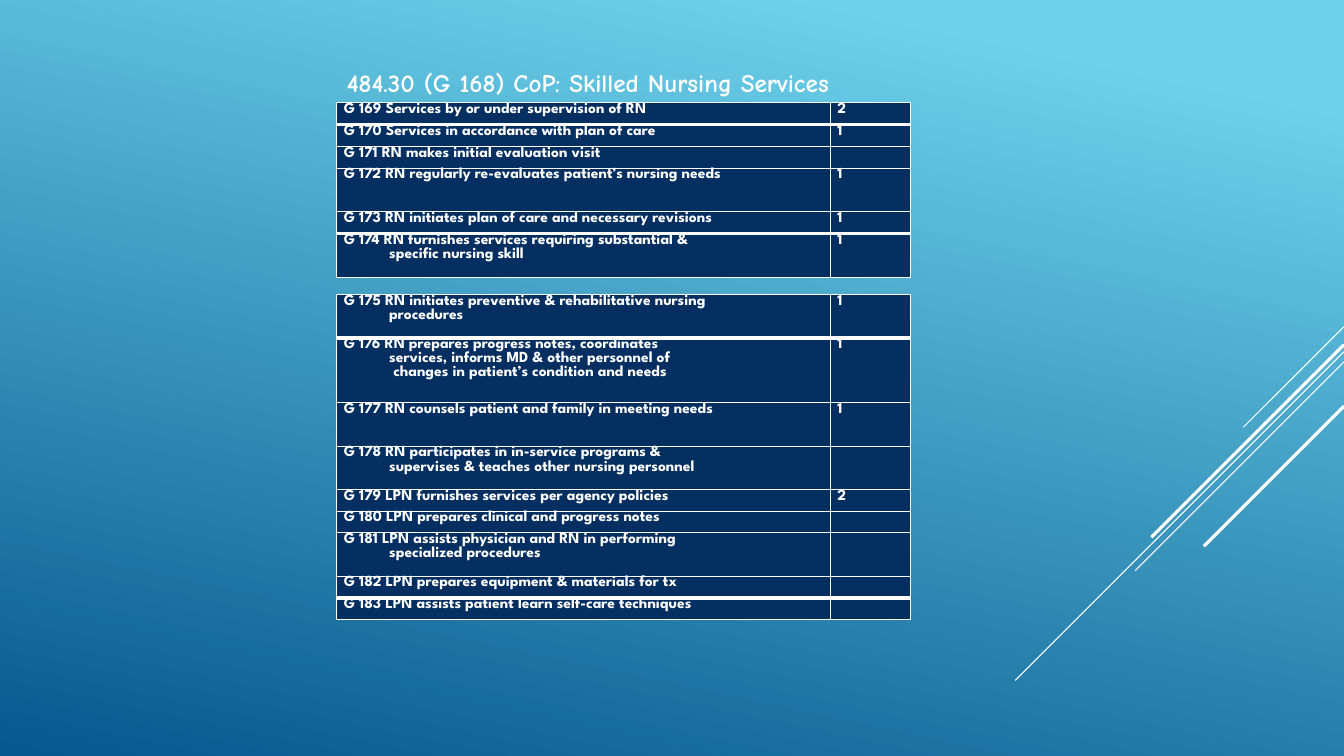
from lxml.etree import SubElement
from pptx import Presentation
from pptx.dml.color import RGBColor
from pptx.enum.shapes import MSO_CONNECTOR
from pptx.enum.text import MSO_ANCHOR, MSO_AUTO_SIZE, PP_ALIGN
from pptx.oxml import parse_xml
from pptx.oxml.ns import nsdecls, qn
from pptx.util import Inches, Pt

WHITE, NAVY = "FFFFFF", "052F61"
SKY, DEEP = "6ED2EB", "06588E"

RAYS = [(43.2, 7.5, 0.75), (46.53, 24.46, 0.75), (47.87, 15.53, 0.75),
        (45.6, 14.33, 2.25), (53.73, 10.43, 2.25)]

FIRST = [
    (1, "2", ["G 169 Services by or under supervision of RN"]),
    (1, "1", ["G 170 Services in accordance with plan of care"]),
    (1, "", ["G 171 RN makes initial evaluation visit"]),
    (2, "1", ["G 172 RN regularly re-evaluates patient’s nursing needs"]),
    (1, "1", ["G 173 RN initiates plan of care and necessary revisions"]),
    (2, "1", ["G 174 RN furnishes services requiring substantial &",
              "specific nursing skill"]),
]
SECOND = [
    (2, "1", ["G 175 RN initiates preventive & rehabilitative nursing",
              "procedures"]),
    (3, "1", ["G 176 RN prepares progress notes, coordinates",
              "services, informs MD & other personnel of",
              "changes in patient’s condition and needs"]),
    (2, "1", ["G 177 RN counsels patient and family in meeting needs"]),
    (2, "", ["G 178 RN participates in in-service programs &",
             "supervises & teaches other nursing personnel"]),
    (1, "2", ["G 179 LPN furnishes services per agency policies"]),
    (1, "", ["G 180 LPN prepares clinical and progress notes"]),
    (2, "", ["G 181 LPN assists physician and RN in performing",
             "specialized procedures"]),
    (1, "", ["G 182 LPN prepares equipment & materials for tx"]),
    (1, "", ["G 183 LPN assists patient learn self-care techniques"]),
]


def tint(code):
    return RGBColor.from_string(code)


class Deck:
    head, body = "Comic Neue", "League Spartan"

    def __init__(self):
        self.prs = Presentation()
        self.prs.slide_width = Inches(13.33)
        self.prs.slide_height = Inches(7.5)
        self.slide = self.prs.slides.add_slide(self.prs.slide_layouts[5])

    def col(self, share):
        return round(self.prs.slide_width * share / 100)

    def row(self, share):
        return round(self.prs.slide_height * share / 100)

    def back(self, start, end, angle):
        fill = self.slide.background.fill
        fill.gradient()
        fill.gradient_angle = angle
        for stop, place, code in zip(fill.gradient_stops, (0.1, 1), (start, end)):
            stop.position = place
            stop.color.rgb = tint(code)

    def run(self, para, text, font, size):
        run = para.add_run()
        run.text = text
        run.font.name = font
        run.font.size = Pt(size)
        run.font.bold = True
        run.font.color.rgb = tint(WHITE)

    def title(self, text, x, y, w, h):
        box = self.slide.shapes.title
        box.left, box.top = self.col(x), self.row(y)
        box.width, box.height = self.col(w), self.row(h)
        frame = box.text_frame
        frame.word_wrap = True
        frame.auto_size = MSO_AUTO_SIZE.SHAPE_TO_FIT_TEXT
        frame.vertical_anchor = MSO_ANCHOR.TOP
        para = frame.paragraphs[0]
        para.alignment = PP_ALIGN.LEFT
        self.run(para, text, self.head, 18)

    def ray(self, y, span, width):
        edge, top, step = self.col(100), self.row(y), self.col(span)
        line = self.slide.shapes.add_connector(
            MSO_CONNECTOR.STRAIGHT, edge, top, edge - step, top + step)
        line.line.color.rgb = tint(WHITE)
        line.line.width = Pt(width)
        SubElement(line._element.spPr, qn("a:effectLst"))

    def rule(self, cell, above, below):
        props = cell._tc.get_or_add_tcPr()
        sides = zip("LRTB", (1, 1, above, below))
        for spot, (side, width) in enumerate(sides):
            props.insert(spot, parse_xml(
                f'<a:ln{side} {nsdecls("a")} w="{Pt(width)}"><a:solidFill>'
                f'<a:srgbClr val="{WHITE}"/></a:solidFill></a:ln{side}>'))

    def fill(self, cell, lines):
        cell.fill.solid()
        cell.fill.fore_color.rgb = tint(NAVY)
        cell.margin_left = cell.margin_right = Inches(0.07)
        cell.margin_top = cell.margin_bottom = 0
        frame = cell.text_frame
        for spot, text in enumerate(lines):
            para = frame.add_paragraph() if spot else frame.paragraphs[0]
            if spot:
                props = para._p.get_or_add_pPr()
                props.set("marL", str(Inches(0.41 + 0.04 * spot)))
                props.set("indent", "0")
            if text:
                self.run(para, text, self.body, 11)
            else:
                SubElement(para._p, qn("a:endParaRPr"), sz="1100")

    def table(self, data, x, y, w, h):
        wide, high = self.col(w), self.row(h)
        table = self.slide.shapes.add_table(
            len(data), 2, self.col(x), self.row(y), wide, high).table
        table.first_row = table.horz_banding = False
        for col, share in zip(table.columns, (0.86, 0.14)):
            col.width = round(wide * share)
        units = sum(size for size, _, _ in data)
        last = len(data) - 1
        for spot, (size, count, lines) in enumerate(data):
            table.rows[spot].height = round(high * size / units)
            above = 3 if spot in (1, last) else 1
            below = 3 if spot in (0, last - 1) else 1
            for cell, text in zip(table.rows[spot].cells, (lines, [count])):
                self.fill(cell, text)
                self.rule(cell, above, below)


def main():
    deck = Deck()
    deck.back(SKY, DEEP, 258)
    for ray in RAYS:
        deck.ray(*ray)
    deck.title("484.30 (G 168) CoP: Skilled Nursing Services",
               25.06, 8.27, 43.81, 5.33)
    deck.table(FIRST, 25.06, 13.6, 42.69, 23.07)
    deck.table(SECOND, 25.06, 38.93, 42.69, 43.07)
    deck.prs.save("out.pptx")


if __name__ == "__main__":
    main()
